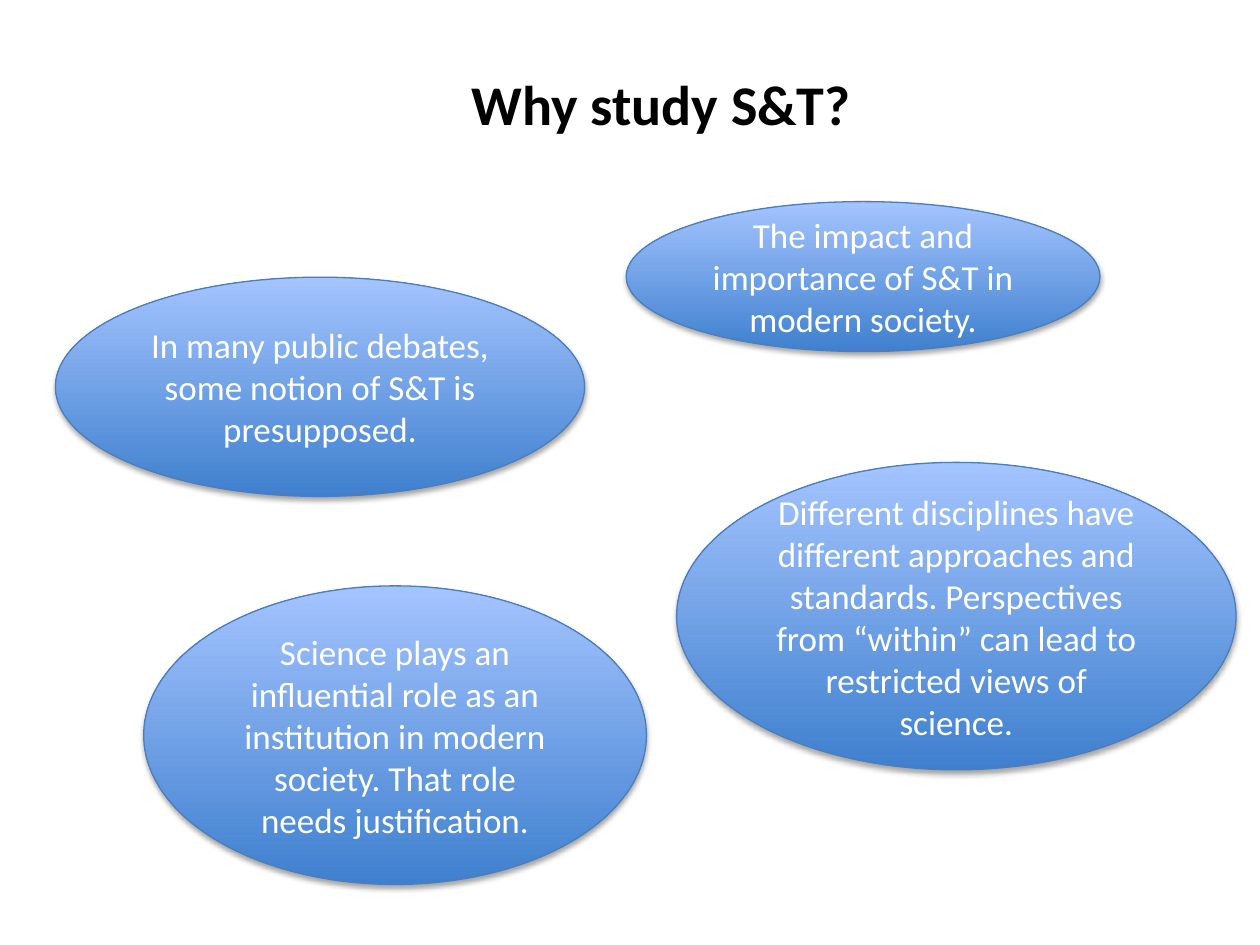
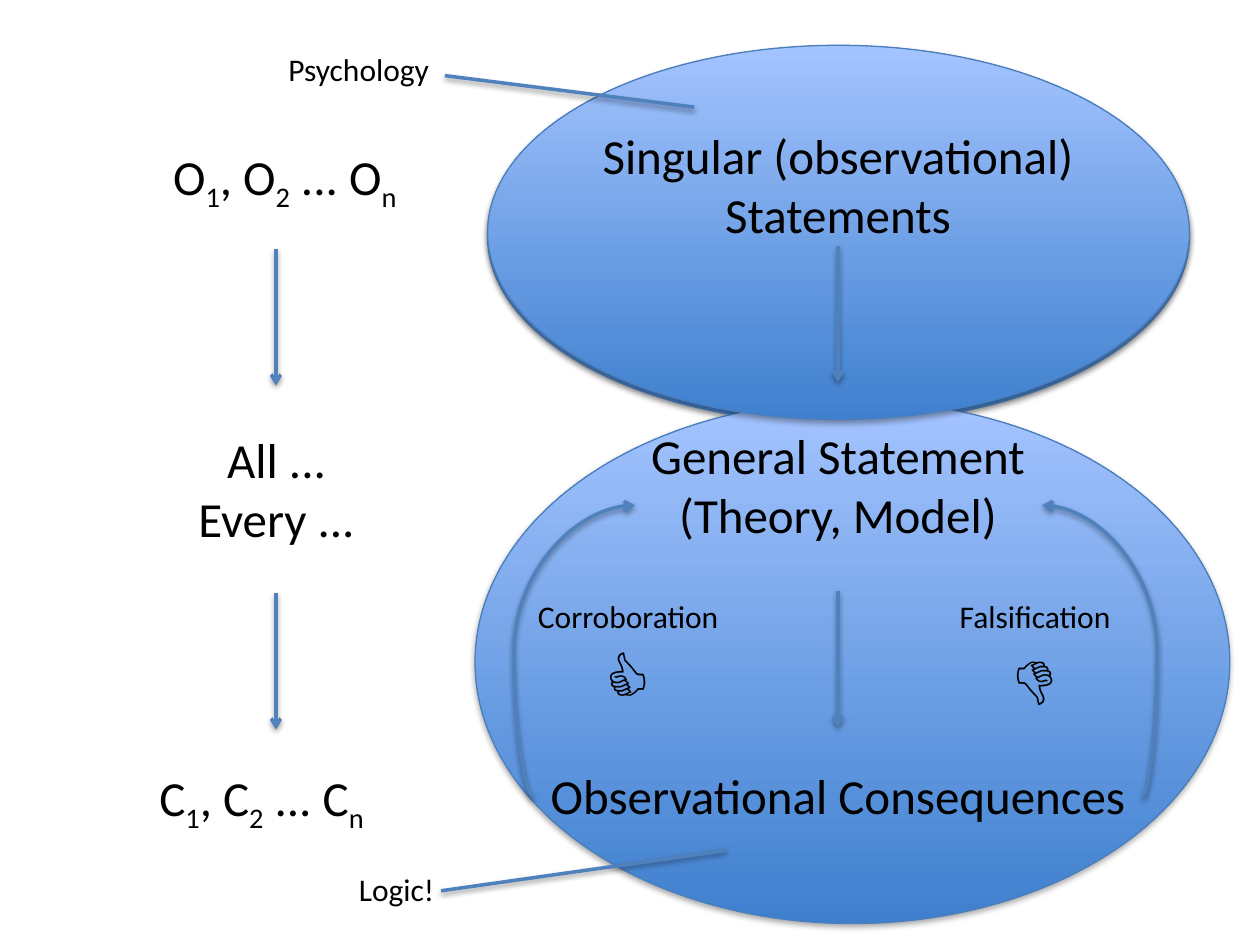
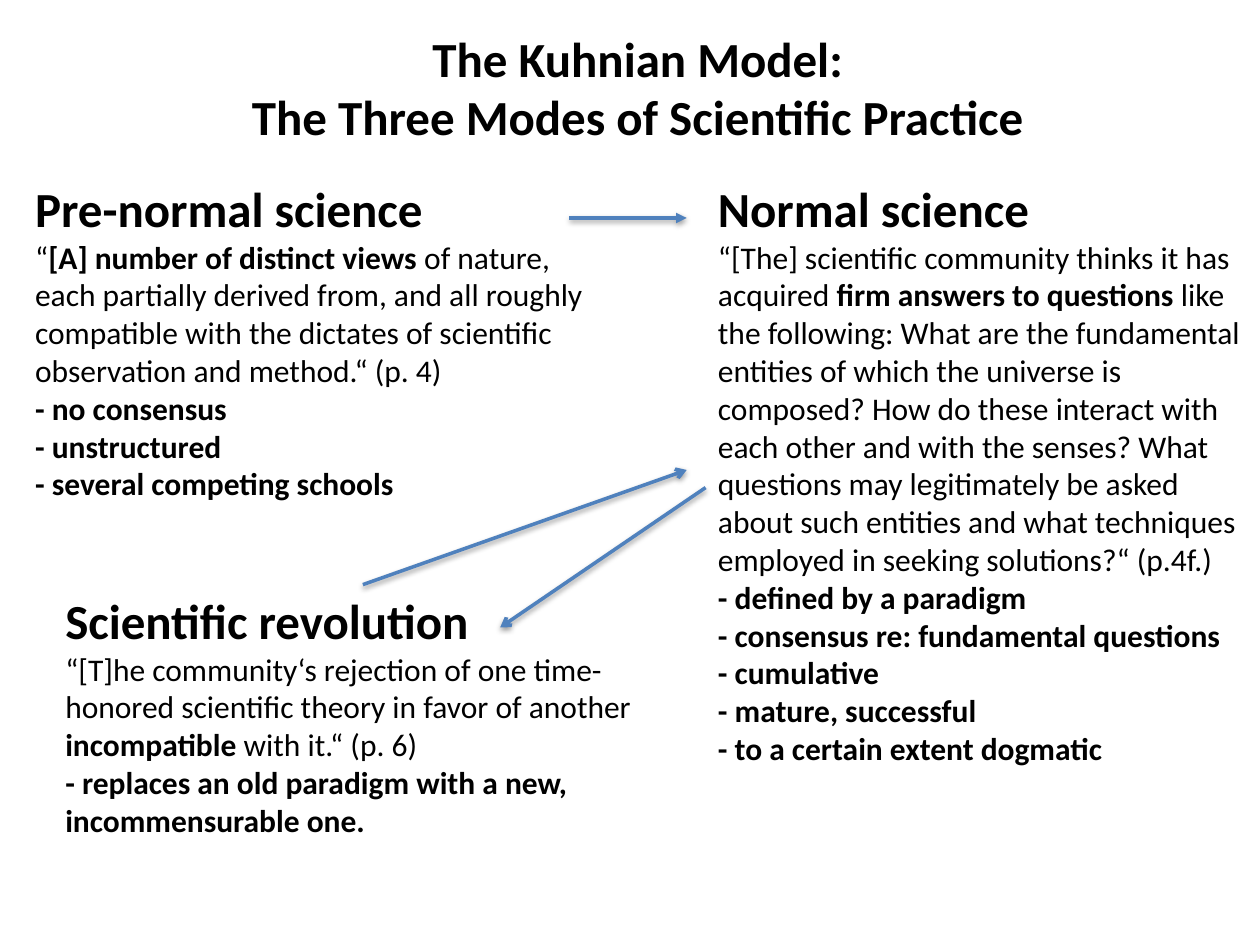
from lxml.etree import SubElement
from pptx import Presentation
from pptx.dml.color import RGBColor
from pptx.enum.shapes import MSO_CONNECTOR, MSO_SHAPE
from pptx.enum.text import MSO_ANCHOR, MSO_AUTO_SIZE, PP_ALIGN
from pptx.oxml.ns import qn
from pptx.util import Inches, Pt

# Shared look
BLACK = RGBColor(0x00, 0x00, 0x00)
WHITE = RGBColor(0xFF, 0xFF, 0xFF)
DEEP_BLUE = RGBColor(0x3F, 0x80, 0xCE)
PALE_BLUE = RGBColor(0xA4, 0xC4, 0xFF)
EDGE_BLUE = RGBColor(0x4B, 0x7E, 0xBC)
LINE_BLUE = RGBColor(0x4F, 0x81, 0xBD)
FONT = "Calibri"
SYMBOL_FONT = "Arial"
TITLE_ONLY, BLANK = 5, 6
ARROW_LENGTH = 1.08


def inches(*values):
    return [Inches(v) for v in values]


def format_run(r, size, bold=False, color=BLACK, font=FONT):
    r.font.name = font
    r.font.size = Pt(size)
    r.font.bold = bold
    r.font.color.rgb = color


def add_run(p, text, size, bold=False, font=FONT):
    r = p.add_run()
    r.text = text
    format_run(r, size, bold, font=font)
    return r


def add_shadow(sp, alpha, distance):
    """Soft shadow that falls straight down."""
    spPr = sp._element.spPr
    effects = spPr.find(qn("a:effectLst"))
    if effects is None:
        effects = SubElement(spPr, qn("a:effectLst"))
    shadow = SubElement(effects, qn("a:outerShdw"), blurRad="40000",
                        dist=str(distance), dir="5400000", rotWithShape="0")
    color = SubElement(shadow, qn("a:srgbClr"), val="000000")
    SubElement(color, qn("a:alpha"), val=str(alpha * 1000))


def add_title(s, text, box, size):
    sp = s.shapes.title
    sp.left, sp.top, sp.width, sp.height = inches(*box)
    tf = sp.text_frame
    tf.text = text
    tf.auto_size = MSO_AUTO_SIZE.NONE
    tf.vertical_anchor = MSO_ANCHOR.MIDDLE
    p = tf.paragraphs[0]
    p.alignment = PP_ALIGN.CENTER
    for r in p.runs:
        format_run(r, size, bold=True)


def add_ellipse(s, box, text=""):
    sp = s.shapes.add_shape(MSO_SHAPE.OVAL, *inches(*box))
    sp.fill.gradient()
    sp.fill.gradient_angle = 90
    for stop, color in zip(sp.fill.gradient_stops, (DEEP_BLUE, PALE_BLUE)):
        stop.color.rgb = color
    sp.line.color.rgb = EDGE_BLUE
    sp.line.width = Pt(0.75)
    sp.shadow.inherit = False
    add_shadow(sp, 35, 23000)
    if text:
        tf = sp.text_frame
        tf.text = text
        tf.vertical_anchor = MSO_ANCHOR.MIDDLE
        p = tf.paragraphs[0]
        p.alignment = PP_ALIGN.CENTER
        format_run(p.runs[0], 20, color=WHITE)


def add_line(s, start, end, head=None, kind=MSO_CONNECTOR.STRAIGHT, bend=None):
    cn = s.shapes.add_connector(kind, *inches(*start, *end))
    cn.line.color.rgb = LINE_BLUE
    cn.line.width = Pt(2)
    if head:
        SubElement(cn.line._get_or_add_ln(), qn("a:tailEnd"), type=head)
    if bend is not None:
        geometry = cn._element.spPr.find(qn("a:prstGeom"))
        guides = geometry.find(qn("a:avLst"))
        if guides is None:
            guides = SubElement(geometry, qn("a:avLst"))
        SubElement(guides, qn("a:gd"), name="adj1",
                   fmla=f"val {round(bend * 100000)}")
    add_shadow(cn, 38, 20000)


def add_down_arrow(s, x, y):
    add_line(s, (x, y), (x, y + ARROW_LENGTH), "arrow")


def add_text_frame(s, box, wrap=True):
    tf = s.shapes.add_textbox(*inches(*box)).text_frame
    tf.word_wrap = wrap
    return tf


def add_label(s, box, lines, size=28, align=PP_ALIGN.CENTER, wrap=False):
    tf = add_text_frame(s, box, wrap)
    tf.text = "\n".join(lines)
    for p in tf.paragraphs:
        p.alignment = align
        format_run(p.runs[0], size)
    return tf


# Slide 1: reasons in ellipses
REASONS = [
    ((0.44, 2.2, 4.2, 1.74),
     "In many public debates, some notion of S&T is presupposed."),
    ((5.37, 3.67, 4.44, 2.44),
     "Different disciplines have different approaches and standards. "
     "Perspectives from “within” can lead to restricted views of science."),
    ((1.14, 4.65, 3.99, 2.37),
     "Science plays an influential role as an institution in modern society. "
     "That role needs justification."),
    ((4.97, 1.6, 3.76, 1.19),
     "The impact and importance of S&T in modern society."),
]


def build_reasons(prs):
    s = prs.slides.add_slide(prs.slide_layouts[TITLE_ONLY])
    add_title(s, "Why study S&T?", (3.63, 0.5, 3.24, 0.64), 32)
    for box, text in REASONS:
        add_ellipse(s, box, text)


# Slide 2: from observations to theory and back
def add_series(s, box, letter):
    """Indexed series such as O1, O2 ... On."""
    p = add_text_frame(s, box, wrap=False).paragraphs[0]
    p.alignment = PP_ALIGN.CENTER
    for text, index in ((letter, "1"), (f", {letter}", "2"), (f" ... {letter}", "n")):
        add_run(p, text, 28)
        r = add_run(p, index, 28)
        r._r.get_or_add_rPr().set("baseline", "-25000")


def draw_symbols(s, left, top):
    add_series(s, (left + 0.07, top, 2.12, 0.57), "O")
    add_label(s, (left + 0.33, top + 2.25, 1.47, 1.36), ["All ...", "Every ..."])
    add_series(s, (left, top + 4.93, 1.89, 0.57), "C")
    for offset in (0.87, 3.6):
        add_down_arrow(s, left + 1.06, top + offset)


def draw_statements(s, left, top):
    add_label(s, (left + 0.14, top, 4.54, 1.04),
              ["Singular (observational) Statements"], wrap=True)
    add_label(s, (left + 0.8, top + 2.38, 3.22, 1.36),
              ["General Statement", "(Theory, Model)"])
    add_label(s, (left, top + 5.08, 4.82, 0.57), ["Observational Consequences"])
    for offset in (1, 3.74):
        add_down_arrow(s, left + 2.41, top + offset)


def draw_verdict(s, left, top, name, symbol):
    p = add_label(s, (left, top, 1.69, 1.08), [name], 18, wrap=True).add_paragraph()
    p.alignment = PP_ALIGN.CENTER
    add_run(p, symbol, 40, font=SYMBOL_FONT)


def draw_feedback(s, left, top):
    """Curved arrows from the consequences back to the theory."""
    for start, end, bend in ((0.1, 0.9, -0.2), (4.92, 4.13, -0.155)):
        add_line(s, (left + start, top + 2.31), (left + end, top), "arrow",
                 MSO_CONNECTOR.CURVE, bend)
    draw_verdict(s, left, top + 0.68, "Corroboration", "👍")
    draw_verdict(s, left + 3.23, top + 0.68, "Falsification", "👎")


def build_theory_cycle(prs):
    s = prs.slides.add_slide(prs.slide_layouts[BLANK])
    for box in ((3.87, 0.39, 5.57, 2.97), (3.77, 3.18, 5.99, 4.15),
                (3.87, 0.36, 5.57, 2.97)):
        add_ellipse(s, box)
    draw_symbols(s, 1.13, 1.11)
    draw_statements(s, 4.24, 0.95)
    draw_feedback(s, 4.14, 4.01)
    # Fields that study each part
    add_line(s, (5.51, 0.85), (3.53, 0.6))
    add_label(s, (2.19, 0.35, 1.33, 0.4), ["Psychology"], 18, PP_ALIGN.LEFT)
    add_line(s, (5.76, 6.75), (3.5, 7.07))
    add_label(s, (2.75, 6.86, 1.43, 0.4), ["Logic!"], 18, PP_ALIGN.LEFT, wrap=True)


# Slide 3: modes of practice as (box, heading, quote before/stressed/after, points)
MODES = [
    ((0.18, 1.37, 4.59, 2.69), "Pre-normal science",
     ("“", "[A] number of distinct views ",
      "of nature, each partially derived from, and all roughly compatible with "
      "the dictates of scientific observation and method.“ (p. 4)"),
     ["no consensus", "unstructured", "several competing schools"]),
    ((5.6, 1.37, 4.4, 4.81), "Normal science",
     ("“[The] scientific community thinks it has acquired ",
      "firm answers to questions ",
      "like the following: What are the fundamental entities of which the "
      "universe is composed? How do these interact with each other and with "
      "the senses? What questions may legitimately be asked about such entities "
      "and what techniques employed in seeking solutions?“ (p.4f.)"),
     ["defined by a paradigm", "consensus re: fundamental questions",
      "cumulative", "mature, successful", "to a certain extent dogmatic"]),
    ((0.42, 4.64, 4.77, 2.09), "Scientific revolution",
     ("“[T]he community‘s rejection of one time-honored scientific theory "
      "in favor of another ", "incompatible", " with it.“ (p. 6)"),
     ["replaces an old paradigm with a new, incommensurable one."]),
]


def draw_mode(s, box, heading, quote, points):
    tf = add_text_frame(s, box)
    add_run(tf.paragraphs[0], heading, 28, bold=True)
    p = tf.add_paragraph()
    for text, bold in zip(quote, (False, True, False)):
        add_run(p, text, 18, bold)
    for point in points:
        add_run(tf.add_paragraph(), f"- {point}", 18, bold=True)


def build_modes(prs):
    s = prs.slides.add_slide(prs.slide_layouts[TITLE_ONLY])
    add_title(s, "The Kuhnian Model:\vThe Three Modes of Scientific Practice",
              (0.3, 0.05, 9.52, 1.28), 28)
    for mode in MODES:
        draw_mode(s, *mode)
    add_line(s, (4.52, 1.73), (5.45, 1.73), "triangle")
    add_line(s, (5.6, 3.87), (3.97, 4.98), "arrow")
    add_line(s, (2.88, 4.64), (5.45, 3.73), "arrow")


def main():
    prs = Presentation()
    prs.slide_width, prs.slide_height = inches(10, 7.5)
    build_reasons(prs)
    build_theory_cycle(prs)
    build_modes(prs)
    prs.save("out.pptx")


if __name__ == "__main__":
    main()
